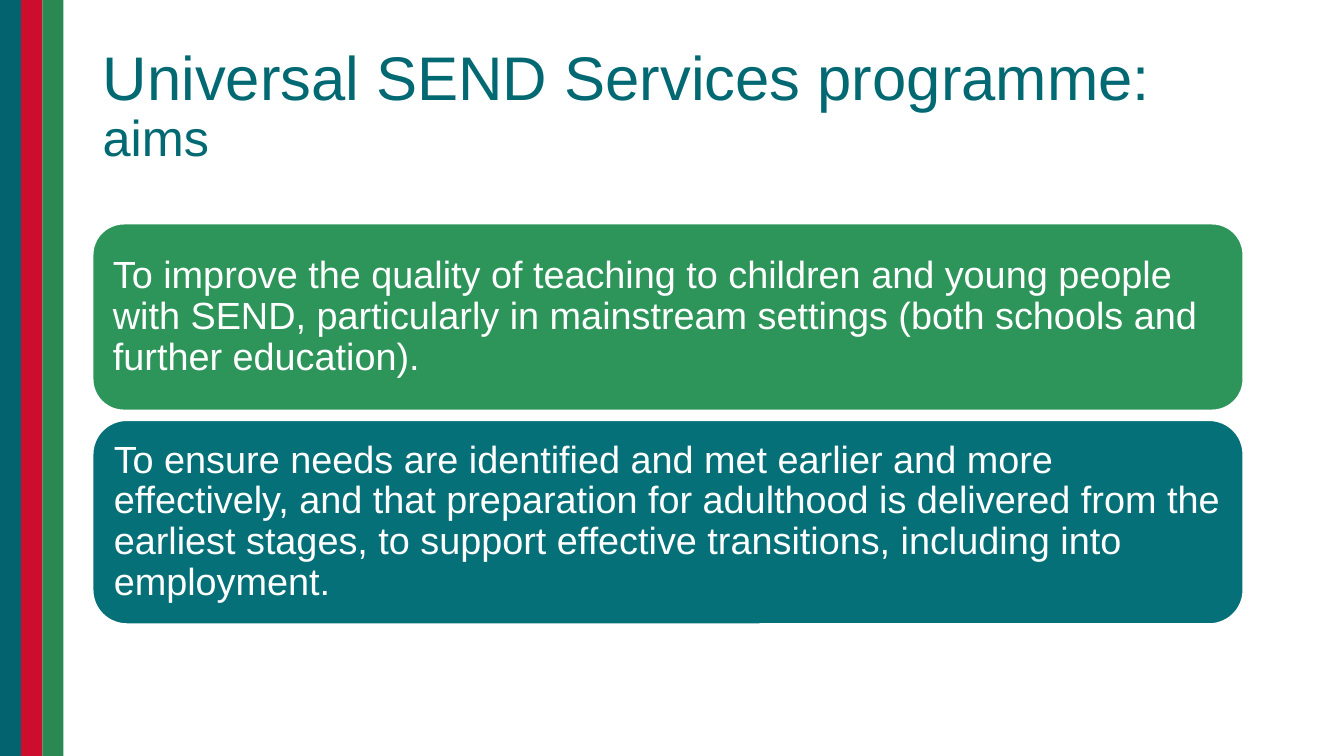
from pptx import Presentation
from pptx.dml.color import RGBColor
from pptx.enum.shapes import MSO_SHAPE
from pptx.enum.text import MSO_ANCHOR, PP_ALIGN
from pptx.util import Inches, Pt

RECT = MSO_SHAPE.RECTANGLE
ROUNDED = MSO_SHAPE.ROUNDED_RECTANGLE
MIDDLE = MSO_ANCHOR.MIDDLE
LEFT = PP_ALIGN.LEFT


def rgb(value):
    return RGBColor.from_string(value)


def write(sp, *runs, color, inset_x=0.1, inset_y=0.05):
    tf = sp.text_frame
    tf.word_wrap = True
    tf.vertical_anchor = MIDDLE
    tf.margin_left = tf.margin_right = Inches(inset_x)
    tf.margin_top = tf.margin_bottom = Inches(inset_y)
    p = tf.paragraphs[0]
    p.alignment = LEFT
    p.line_spacing = 0.9
    for text, size in runs:
        r = p.add_run()
        r.text = text
        r.font.name = "Arial"
        r.font.size = Pt(size)
        r.font.color.rgb = rgb(color)


prs = Presentation()
prs.slide_width = Inches(13.33)
prs.slide_height = Inches(7.5)
s = prs.slides.add_slide(prs.slide_layouts[6])

stripe = 0.21
for i, color in enumerate(["03646F", "CC0D2D", "2A8852"]):
    sp = s.shapes.add_shape(RECT, Inches(i * stripe), 0, Inches(stripe), prs.slide_height)
    sp.shadow.inherit = False
    sp.fill.solid()
    sp.fill.fore_color.rgb = rgb(color)
    sp.line.fill.background()

title = s.shapes.add_textbox(Inches(0.92), Inches(0.34), Inches(11.5), Inches(1.45))
write(title, ("Universal SEND Services programme: ", 44), ("aims", 36), color="026973")

aims = [
    (2.22, 1.85, "2E955A",
     "To improve the quality of teaching to children and young people with SEND, "
     "particularly in mainstream settings (both schools and further education)."),
    (4.17, 2.02, "057078",
     "To ensure needs are identified and met earlier and more effectively, and that "
     "preparation for adulthood is delivered from the earliest stages, to support "
     "effective transitions, including into employment."),
]
for top, height, color, text in aims:
    sp = s.shapes.add_shape(ROUNDED, Inches(0.92), Inches(top), Inches(11.41), Inches(height))
    sp.shadow.inherit = False
    sp.fill.solid()
    sp.fill.fore_color.rgb = rgb(color)
    sp.line.color.rgb = rgb("FFFFFF")
    sp.line.width = Pt(1)
    write(sp, (text, 27), color="FFFFFF", inset_x=0.11, inset_y=0.11)

prs.save("out.pptx")
